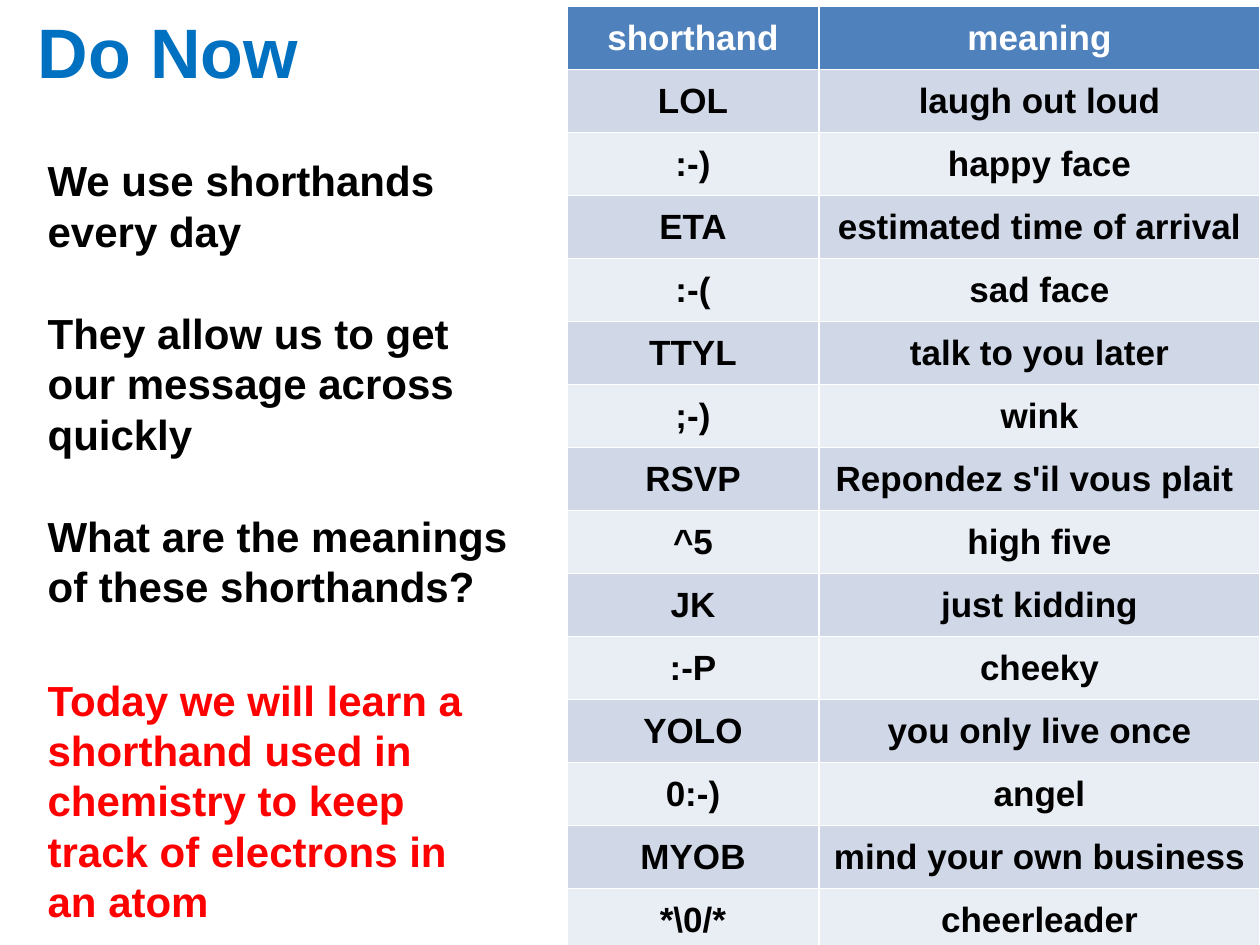
"""Build the "Do Now" slide about everyday shorthands."""
from typing import NamedTuple

import pptx
import pptx.dml.color
import pptx.enum.text
import pptx.util

Inches = pptx.util.Inches
RGBColor = pptx.dml.color.RGBColor
PP_ALIGN = pptx.enum.text.PP_ALIGN
MSO_ANCHOR = pptx.enum.text.MSO_ANCHOR

FONT = "Arial"
TITLE_BLUE = RGBColor(0x00, 0x70, 0xC0)
BLACK = RGBColor(0x00, 0x00, 0x00)
WHITE = RGBColor(0xFF, 0xFF, 0xFF)
RED = RGBColor(0xFF, 0x00, 0x00)
HEADER_FILL = RGBColor(0x4F, 0x81, 0xBD)
BANDS = (RGBColor(0xE9, 0xED, 0xF4), RGBColor(0xD0, 0xD8, 0xE8))


class Note(NamedTuple):
    text: str
    top: float
    height: float
    color: RGBColor = BLACK
    left: float = 0.28
    width: float = 3.9
    size: int = 24
    anchor: MSO_ANCHOR = MSO_ANCHOR.TOP


class Entry(NamedTuple):
    shorthand: str
    meaning: str


NOTES = [
    Note("Do Now", 0, 0.8, TITLE_BLUE, 0.2, 9.6, 40, MSO_ANCHOR.MIDDLE),
    Note("We use shorthands every day", 1.18, 0.91),
    Note("They allow us to get our message across quickly", 2.39, 1.31),
    Note("What are the meanings of these shorthands?", 4, 1.31),
    Note("Today we will learn a shorthand used in chemistry to keep "
         "track of electrons in\van atom", 5.3, 2.12, RED),
]

ENTRIES = [
    Entry("shorthand", "meaning"),
    Entry("LOL", "laugh out loud"),
    Entry(":-)", "happy face"),
    Entry("ETA", "estimated time of arrival"),
    Entry(":-(", "sad face"),
    Entry("TTYL", "talk to you later"),
    Entry(";-)", "wink"),
    Entry("RSVP", "Repondez s'il vous plait "),
    Entry("^5", "high five"),
    Entry("JK", "just kidding"),
    Entry(":-P", "cheeky"),
    Entry("YOLO", "you only live once"),
    Entry("0:-)", "angel"),
    Entry("MYOB", "mind your own business"),
    Entry("*\\0/*", "cheerleader"),
]

COLUMN_WIDTHS = (2, 3.5)
ROW_HEIGHT = 0.5


def set_text(tf, text: str, size: int, color: RGBColor) -> None:
    p = tf.paragraphs[0]
    p.text = text
    p.font.name = FONT
    p.font.size = pptx.util.Pt(size)
    p.font.bold = True
    p.font.color.rgb = color


def add_note(s, note: Note) -> None:
    sp = s.shapes.add_textbox(Inches(note.left), Inches(note.top),
                              Inches(note.width), Inches(note.height))
    tf = sp.text_frame
    tf.word_wrap = True
    tf.vertical_anchor = note.anchor
    set_text(tf, note.text, note.size, note.color)


def add_shorthand_table(s, entries: list[Entry]) -> None:
    frame = s.shapes.add_table(
        len(entries), len(COLUMN_WIDTHS), Inches(4.5), Inches(0.05),
        Inches(sum(COLUMN_WIDTHS)), Inches(ROW_HEIGHT * len(entries)))
    table = frame.table
    for column, width in zip(table.columns, COLUMN_WIDTHS):
        column.width = Inches(width)
    for i, entry in enumerate(entries):
        table.rows[i].height = Inches(ROW_HEIGHT)
        for j, text in enumerate(entry):
            cell = table.cell(i, j)
            cell.vertical_anchor = MSO_ANCHOR.MIDDLE
            cell.fill.solid()
            cell.fill.fore_color.rgb = BANDS[i % 2] if i else HEADER_FILL
            set_text(cell.text_frame, text, 20, BLACK if i else WHITE)
            cell.text_frame.paragraphs[0].alignment = PP_ALIGN.CENTER


def main() -> None:
    prs = pptx.Presentation()
    prs.slide_width, prs.slide_height = Inches(10), Inches(7.5)
    s = prs.slides.add_slide(prs.slide_layouts[6])
    title, *notes = NOTES
    add_note(s, title)
    add_shorthand_table(s, ENTRIES)
    for note in notes:
        add_note(s, note)
    prs.save("out.pptx")


if __name__ == "__main__":
    main()
